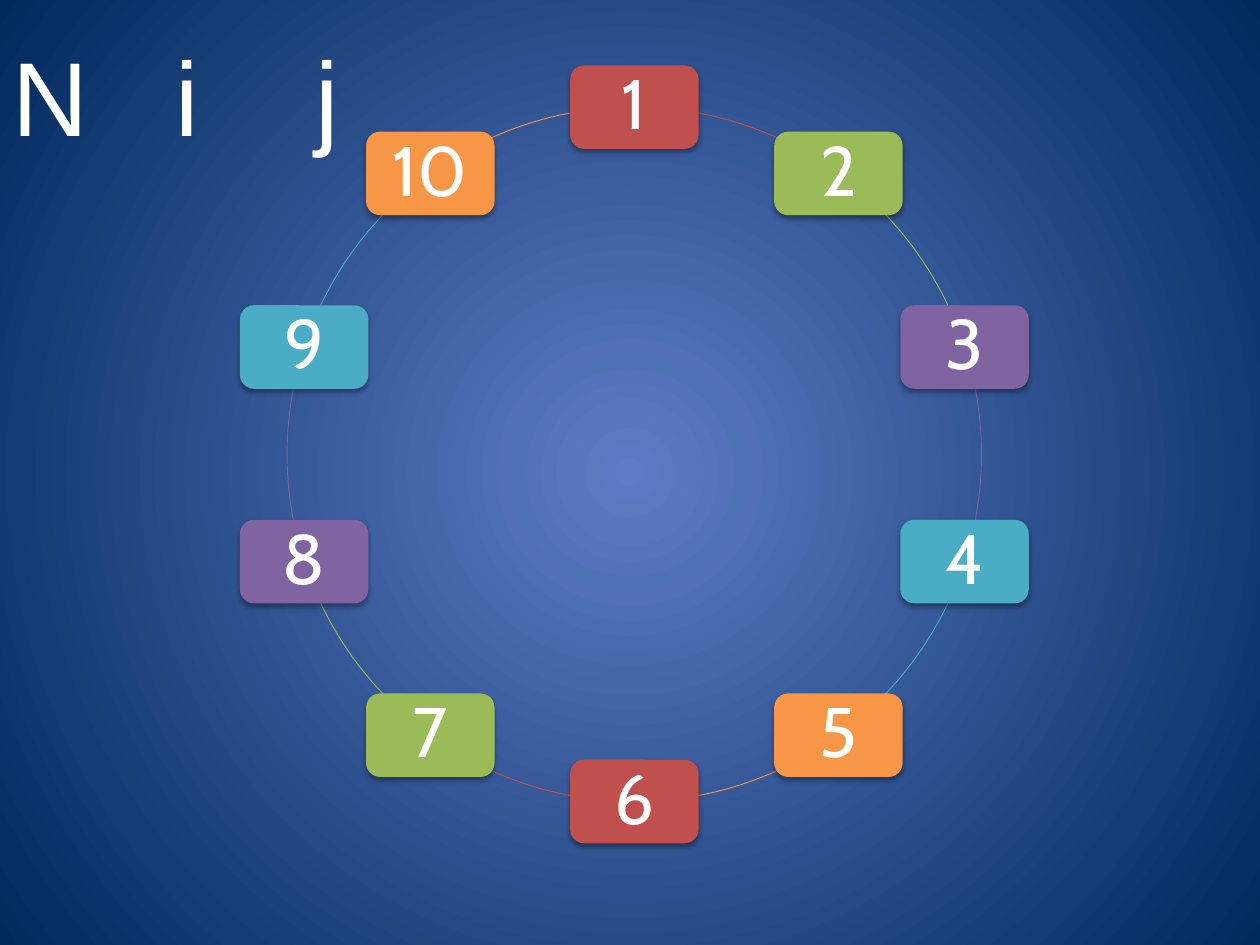
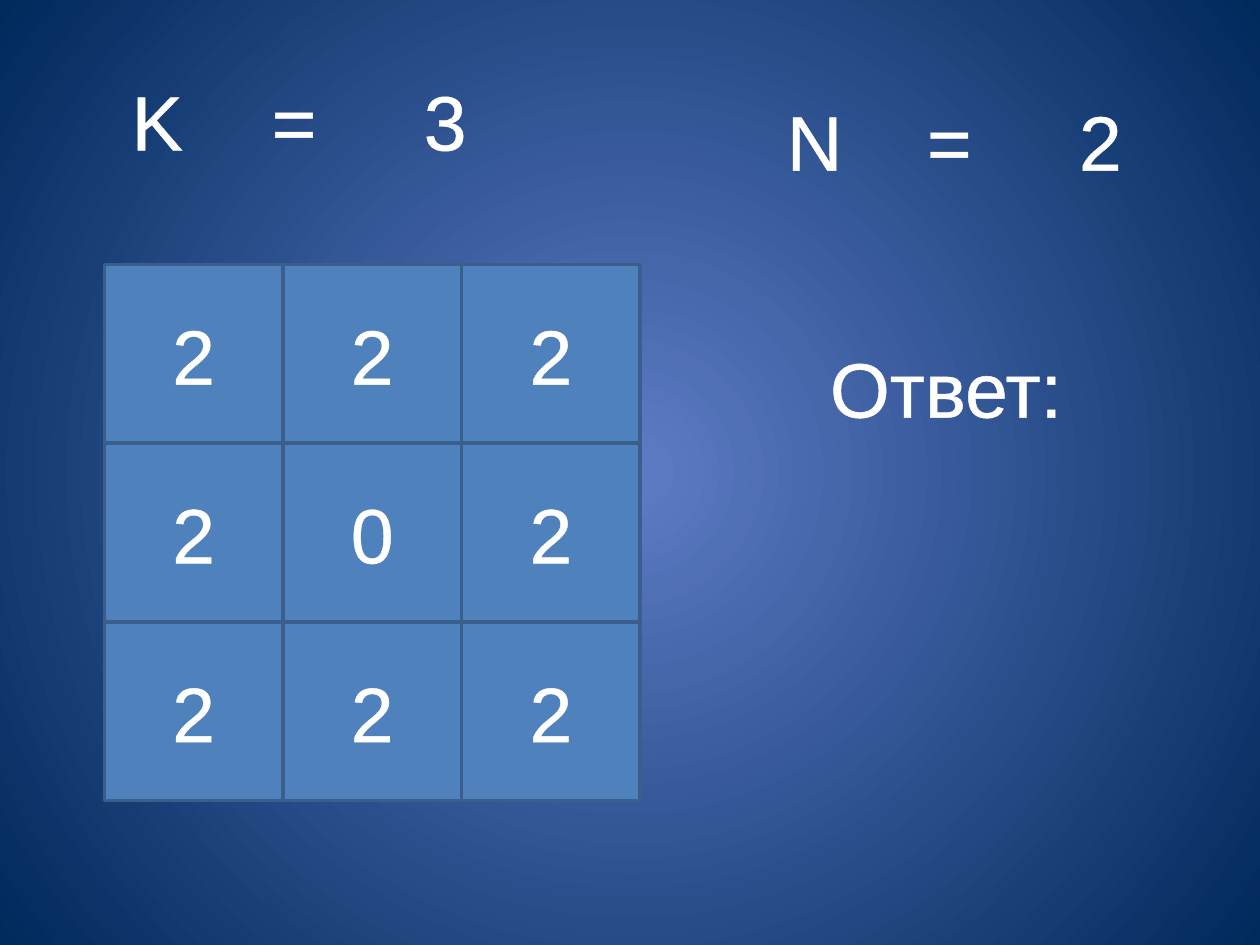
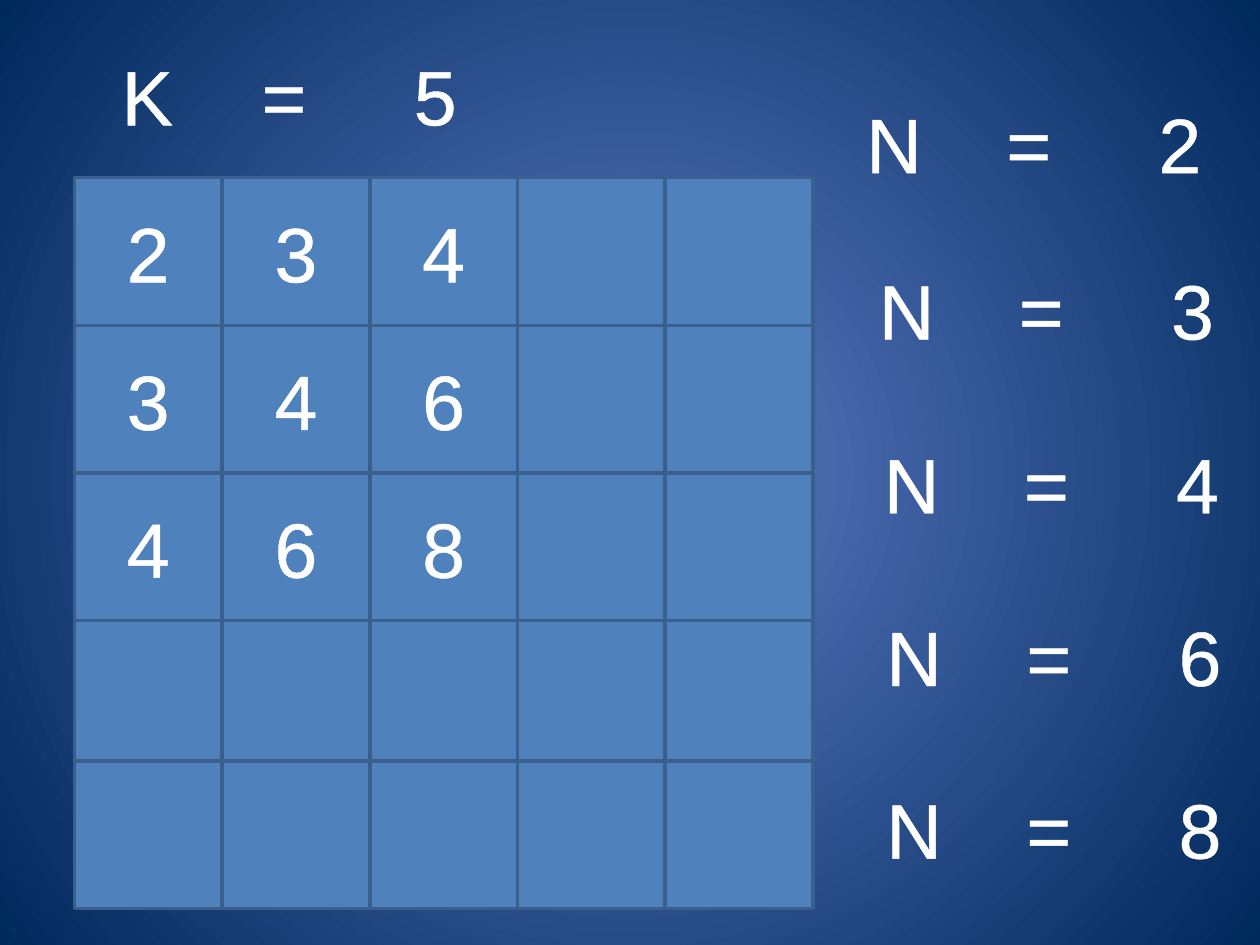
from pptx import Presentation
from pptx.dml.color import RGBColor
from pptx.enum import shapes, text
from pptx.oxml import parse_xml
from pptx.oxml.ns import nsdecls, qn
from pptx.util import Pt

GLOW = RGBColor(0x5E, 0x7C, 0xC5)
NAVY = RGBColor(0x00, 0x29, 0x5C)
WHITE = RGBColor(0xFF, 0xFF, 0xFF)
CELL_FILL = RGBColor(0x4F, 0x81, 0xBD)
CELL_LINE = RGBColor(0x3A, 0x5F, 0x8C)
RING_COLORS = [
    RGBColor(0xC0, 0x50, 0x4D),
    RGBColor(0x9B, 0xBB, 0x59),
    RGBColor(0x80, 0x64, 0xA2),
    RGBColor(0x4B, 0xAC, 0xC6),
    RGBColor(0xF7, 0x96, 0x46),
]

BODY_FONT = "Arial"
RING_FONT = "Cabin"
BODY_SIZE = 44

RING_SIZE = 396.8
RING_LEFT, RING_TOP = 164.1, 61.2
NODE_WIDTH, NODE_HEIGHT = 73.4, 47.7
NODE_COUNT = 10

EQUATION_SIZE = (244.8, 95)
EQUATION_INSET = 27
EQUATION_STOPS = (80, 167)


def set_background(master):
    """Give every slide the radial blue gradient."""
    fill = master.background.fill
    fill.gradient()
    for stop, color, position in zip(fill.gradient_stops, (GLOW, NAVY), (0, 1)):
        stop.color.rgb = color
        stop.position = position
    gradient = master.element.find(".//" + qn("a:gradFill"))
    linear = gradient.find(qn("a:lin"))
    gradient.replace(linear, parse_xml(
        f'<a:path {nsdecls("a")} path="circle"><a:fillToRect l="100000" '
        't="100000" r="100000" b="100000"/></a:path>'))


def write(shape, words, size=BODY_SIZE, font=BODY_FONT, outlined=True,
          align=text.PP_ALIGN.CENTER, anchor=text.MSO_ANCHOR.MIDDLE):
    frame = shape.text_frame
    frame.word_wrap = True
    frame.vertical_anchor = anchor
    frame.text = words
    paragraph = frame.paragraphs[0]
    paragraph.alignment = align
    for run in paragraph.runs:
        run.font.size = Pt(size)
        run.font.name = font
        run.font.color.rgb = WHITE
        if outlined:
            run.font._element.insert(0, parse_xml(
                f'<a:ln {nsdecls("a")} w="{Pt(1.45)}"><a:solidFill>'
                f'<a:srgbClr val="{WHITE}"/></a:solidFill></a:ln>'))
    return paragraph


def add_tab_stops(paragraph, positions):
    stops = "".join(f'<a:tab pos="{Pt(p)}" algn="l"/>' for p in positions)
    paragraph._p.get_or_add_pPr().append(
        parse_xml(f'<a:tabLst {nsdecls("a")}>{stops}</a:tabLst>'))


def add_label(slide, left, top, width, height):
    return slide.shapes.add_textbox(Pt(left), Pt(top), Pt(width), Pt(height))


def add_equation(slide, left, top, letter, value):
    equation = add_label(slide, left, top, *EQUATION_SIZE)
    equation.text_frame.margin_left = Pt(EQUATION_INSET)
    paragraph = write(equation, f"{letter}\t=\t{value}", align=text.PP_ALIGN.LEFT)
    add_tab_stops(paragraph, EQUATION_STOPS)


def add_grid(slide, left, top, side, rows, last_row_lift=0):
    """Draw square cells; the last row may overlap the one above it."""
    for r, row in enumerate(rows):
        lift = last_row_lift if r == len(rows) - 1 else 0
        for c, value in enumerate(row):
            cell = slide.shapes.add_shape(
                shapes.MSO_SHAPE.RECTANGLE, Pt(left + c * side),
                Pt(top + r * side - lift), Pt(side), Pt(side))
            cell.shadow.inherit = False
            cell.fill.solid()
            cell.fill.fore_color.rgb = CELL_FILL
            cell.line.color.rgb = CELL_LINE
            cell.line.width = Pt(2)
            if value:
                write(cell, str(value))


def add_ring_arc(slide, start, end, color):
    """Draw part of the ring; angles run clockwise from the right, in degrees."""
    arc = slide.shapes.add_shape(
        shapes.MSO_SHAPE.ARC, Pt(RING_LEFT), Pt(RING_TOP),
        Pt(RING_SIZE), Pt(RING_SIZE))
    arc.shadow.inherit = False
    arc.fill.background()
    arc.line.color.rgb = color
    arc.line.width = Pt(0.5)
    # Angles are stored in 60000ths, adjustments are scaled by 100000.
    arc.adjustments[0] = start % 360 * 0.6
    arc.adjustments[1] = end % 360 * 0.6


def add_ring_node(slide, center_x, center_y, number, color):
    node = slide.shapes.add_shape(
        shapes.MSO_SHAPE.ROUNDED_RECTANGLE,
        Pt(center_x - NODE_WIDTH / 2), Pt(center_y - NODE_HEIGHT / 2),
        Pt(NODE_WIDTH), Pt(NODE_HEIGHT))
    node.fill.solid()
    node.fill.fore_color.rgb = color
    node.line.fill.background()
    node.shadow.inherit = False
    node._element.spPr.find(qn("a:effectLst")).append(parse_xml(
        f'<a:outerShdw {nsdecls("a")} blurRad="{Pt(3.1)}" dist="{Pt(2)}" '
        'dir="5400000" rotWithShape="0"><a:srgbClr val="000000">'
        '<a:alpha val="35000"/></a:srgbClr></a:outerShdw>'))
    frame = node.text_frame
    frame.margin_left = frame.margin_right = 0
    frame.margin_top = frame.margin_bottom = 0
    write(node, str(number), 40, RING_FONT, outlined=False).line_spacing = 0.9


def add_ring(slide):
    radius = RING_SIZE / 2
    step = 360 / NODE_COUNT
    angles = [i * step - 90 for i in range(NODE_COUNT)]
    colors = [RING_COLORS[i % len(RING_COLORS)] for i in range(NODE_COUNT)]
    for angle, color in zip(angles, colors):
        add_ring_arc(slide, angle, angle + step, color)
    for number, (angle, color) in enumerate(zip(angles, colors), 1):
        turn = math.radians(angle)
        add_ring_node(slide, RING_LEFT + radius * (1 + math.cos(turn)),
                      RING_TOP + radius * (1 + math.sin(turn)), number, color)


def build_circle_slide(slide):
    add_ring(slide)
    variables = add_label(slide, 0, 14.4, 203, 152.6)
    paragraph = write(variables, "N\ti\tj", 60, outlined=False,
                      align=text.PP_ALIGN.LEFT, anchor=text.MSO_ANCHOR.TOP)
    add_tab_stops(paragraph, (93.4, 173.4))


def build_small_square_slide(slide):
    add_equation(slide, 48.2, 20.9, "K", 3)
    add_grid(slide, 59.6, 151.2, 102.1, ["222", "202", "222"])
    add_equation(slide, 422.6, 32.4, "N", 2)
    answer = add_label(slide, 424.1, 173.5, 270, 95)
    answer.text_frame.margin_right = Pt(44)
    write(answer, "Ответ:")


def build_large_square_slide(slide):
    add_equation(slide, 42.5, 6.5, "K", 5)
    rows = [[2, 3, 4, "", ""], [3, 4, 6, "", ""], [4, 6, 8, "", ""],
            [""] * 5, [""] * 5]
    add_grid(slide, 42.5, 101.5, 84.4, rows, last_row_lift=4.2)
    for left, top, value in [(468, 33.8, 2), (475.2, 128.9, 3), (478.1, 228.2, 4),
                             (479.5, 326.9, 6), (479.5, 425.5, 8)]:
        add_equation(slide, left, top, "N", value)


def main():
    deck = Presentation()
    deck.slide_width, deck.slide_height = Pt(720), Pt(540)
    set_background(deck.slide_master)
    blank = deck.slide_layouts[6]
    for build in (build_circle_slide, build_small_square_slide,
                  build_large_square_slide):
        build(deck.slides.add_slide(blank))
    deck.save("out.pptx")


import math

if __name__ == "__main__":
    main()
